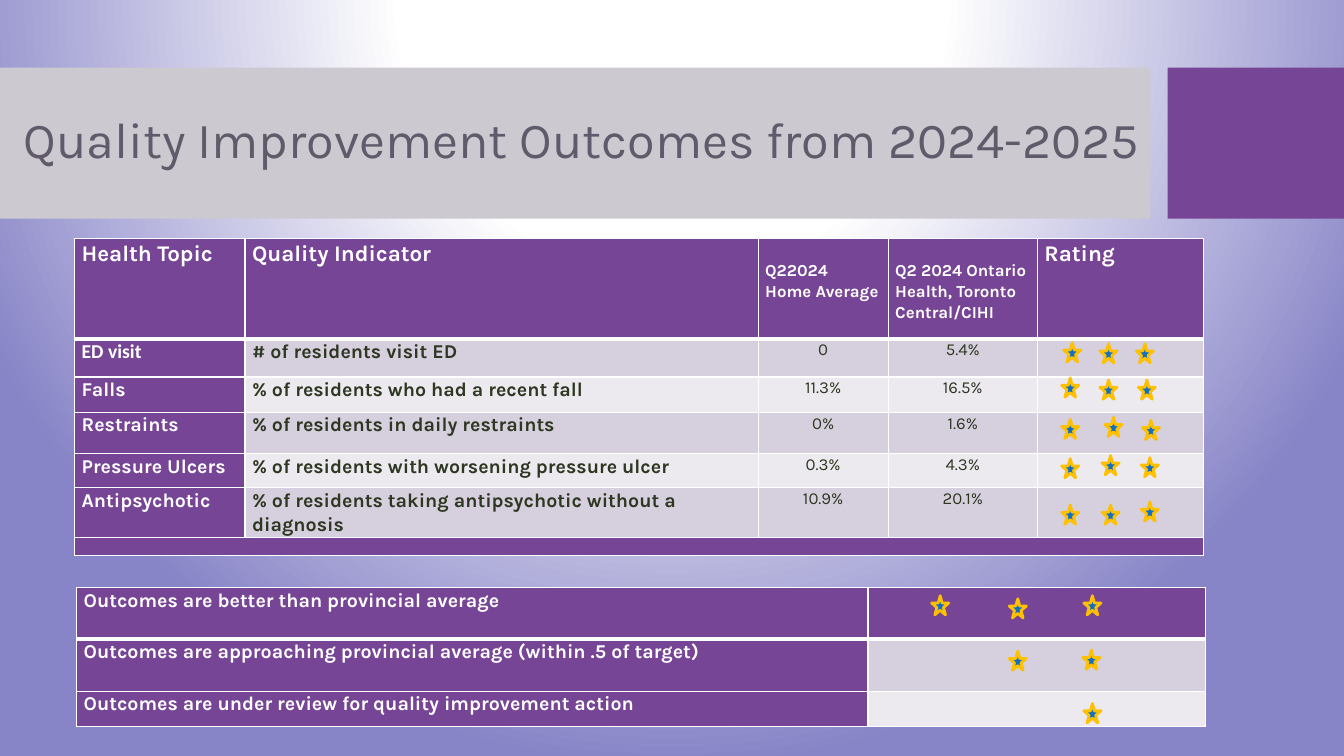
from dataclasses import dataclass
from typing import Any

import lxml.etree
import pptx
import pptx.dml.color
import pptx.enum.shapes
import pptx.enum.text
import pptx.oxml
import pptx.oxml.ns
import pptx.util

Inches = pptx.util.Inches
Pt = pptx.util.Pt
ALIGN = pptx.enum.text.PP_ALIGN
SHAPE = pptx.enum.shapes.MSO_SHAPE
qn = pptx.oxml.ns.qn

PURPLE, GREY, WHITE = "774595", "CCC9D1", "FFFFFF"
BANDS = ("D6CFDD", "ECE9EF")
INK, TITLE_INK = "2E3722", "605A6A"
STAR_BLUE, STAR_GOLD = "0F6FC6", "FFC000"
STAR_WIDTH, STAR_HEIGHT = 0.17, 0.19


@dataclass(frozen=True)
class CellStyle:
    size: int
    color: str = WHITE
    bold: bool = True
    align: Any = ALIGN.LEFT
    font: str = "Karla"
    top: float = 0


@dataclass(frozen=True)
class Entry:
    text: str
    style: CellStyle
    fill: str


@dataclass(frozen=True)
class Grid:
    left: float
    top: float
    columns: tuple[float, ...]
    heights: tuple[float, ...]
    rows: list[list[Entry]]


@dataclass(frozen=True)
class StarRow:
    spots: tuple[tuple[float, float], ...]


HEADING = CellStyle(16)
PERIOD = CellStyle(12, top=0.21)
TOPIC = CellStyle(14)
TOPIC_CALIBRI = CellStyle(14, font="Calibri")
INDICATOR = CellStyle(14, INK)
VALUE = CellStyle(12, INK, False, ALIGN.CENTER)
BLANK = CellStyle(8)


def rgb(value: str) -> pptx.dml.color.RGBColor:
    return pptx.dml.color.RGBColor.from_string(value)


def apply(target: Any, values: dict[str, Any]) -> None:
    for name, value in values.items():
        setattr(target, name, value)


def paint_background(slide: Any) -> None:
    slide.background.fill.solid()
    properties = slide.element.find(".//" + qn("p:bgPr"))
    stops = "".join(
        f'<a:gs pos="{position * 1000}"><a:srgbClr val="{color}"/></a:gs>'
        for position, color in ((0, WHITE), (35, WHITE), (100, "8784C7")))
    gradient = pptx.oxml.parse_xml(
        f'<a:gradFill {pptx.oxml.ns.nsdecls("a")} rotWithShape="1">'
        f'<a:gsLst>{stops}</a:gsLst><a:path path="circle">'
        '<a:fillToRect l="50000" t="-80000" r="50000" b="180000"/>'
        '</a:path></a:gradFill>')
    properties.replace(properties[0], gradient)


def add_figure(slide: Any, kind: Any, box: tuple[float, ...], fill: str,
               line: str | None = None) -> None:
    figure = slide.shapes.add_shape(kind, *map(Inches, box))
    figure.shadow.inherit = False
    figure.fill.solid()
    figure.fill.fore_color.rgb = rgb(fill)
    if line:
        figure.line.color.rgb = rgb(line)
        figure.line.width = Pt(2)
    else:
        figure.line.fill.background()


def add_borders(cell: Any, bottom: int) -> None:
    properties = cell._tc.get_or_add_tcPr()
    for side, width in (("L", 1), ("R", 1), ("T", 1), ("B", bottom)):
        line = lxml.etree.SubElement(properties, qn(f"a:ln{side}"), w=str(Pt(width)))
        fill = lxml.etree.SubElement(line, qn("a:solidFill"))
        lxml.etree.SubElement(fill, qn("a:srgbClr"), val=WHITE)


def fill_cell(cell: Any, entry: Entry, bottom: int) -> None:
    style = entry.style
    add_borders(cell, bottom)
    cell.fill.solid()
    cell.fill.fore_color.rgb = rgb(entry.fill)
    apply(cell, {"margin_left": Inches(0.07), "margin_right": Inches(0.07),
                 "margin_top": Inches(style.top), "margin_bottom": 0})
    cell.text = entry.text
    for paragraph in cell.text_frame.paragraphs:
        apply(paragraph, {"alignment": style.align, "line_spacing": 1.07})
        for run in paragraph.runs:
            apply(run.font, {"size": Pt(style.size), "bold": style.bold,
                             "name": style.font})
            run.font.color.rgb = rgb(style.color)
        if not entry.text:
            lxml.etree.SubElement(paragraph._p, qn("a:endParaRPr"),
                                  sz=str(style.size * 100))


def add_grid(slide: Any, grid: Grid) -> Any:
    frame = slide.shapes.add_table(
        len(grid.heights), len(grid.columns), Inches(grid.left), Inches(grid.top),
        Inches(sum(grid.columns)), Inches(sum(grid.heights)))
    table = frame.table
    apply(table, {"first_row": False, "horz_banding": False})
    for column, width in zip(table.columns, grid.columns):
        column.width = Inches(width)
    for row, height in zip(table.rows, grid.heights):
        row.height = Inches(height)
    for r, entries in enumerate(grid.rows):
        for c, entry in enumerate(entries):
            fill_cell(table.cell(r, c), entry, 3 if r == 0 else 1)
    return table


# Table contents
HEADINGS = [("Health Topic", HEADING), ("Quality Indicator", HEADING),
            ("Q22024\nHome Average", PERIOD),
            ("Q2 2024 Ontario Health, Toronto Central/CIHI", PERIOD),
            ("Rating", HEADING)]
RESULTS = [
    ("ED visit", "# of residents visit ED", "0", "5.4%"),
    ("Falls", "% of residents who had a recent fall", "11.3%", "16.5%"),
    ("Restraints", "% of residents in daily restraints", "0%", "1.6%"),
    ("Pressure Ulcers", "% of residents with worsening pressure ulcer", "0.3%", "4.3%"),
    ("Antipsychotic", "% of residents taking antipsychotic without a diagnosis",
     "10.9%", "20.1%"),
]
LEGEND = [("Outcomes are better than provincial average", PURPLE),
          ("Outcomes are approaching provincial average (within .5 of target)", BANDS[0]),
          ("Outcomes are under review for quality improvement action", BANDS[1])]
STARS = [
    StarRow(((10.55, 3.4), (10.91, 3.41), (11.27, 3.41))),
    StarRow(((10.53, 3.75), (10.91, 3.77), (11.29, 3.77))),
    StarRow(((10.53, 4.16), (10.96, 4.14), (11.33, 4.17))),
    StarRow(((10.53, 4.55), (10.93, 4.52), (11.32, 4.54))),
    StarRow(((10.53, 5.01), (10.93, 5.01), (11.32, 4.98))),
    StarRow(((9.24, 5.91), (10.01, 5.94), (10.75, 5.91))),
    StarRow(((10.01, 6.46), (10.74, 6.45))),
    StarRow(((10.75, 6.98),)),
]


def result_row(index: int, result: tuple[str, ...]) -> list[Entry]:
    band = BANDS[index % 2]
    topic, *details = result
    topic_style = TOPIC_CALIBRI if index == 0 else TOPIC
    return [Entry(topic, topic_style, PURPLE),
            *(Entry(text, style, band)
              for text, style in zip([*details, ""], (INDICATOR, VALUE, VALUE, BLANK)))]


def main() -> None:
    deck = pptx.Presentation()
    apply(deck, {"slide_width": Inches(13.33), "slide_height": Inches(7.5)})
    slide = deck.slides.add_slide(deck.slide_layouts[5])
    paint_background(slide)

    # Title band
    add_figure(slide, SHAPE.RECTANGLE, (0, 0.67, 11.41, 1.5), GREY)
    add_figure(slide, SHAPE.RECTANGLE, (11.58, 0.67, 1.75, 1.5), PURPLE)
    title = slide.shapes.title
    slide.shapes._spTree.append(title._element)
    apply(title, {"left": Inches(0.13), "top": Inches(0.82),
                  "width": Inches(11.6), "height": Inches(1.18)})
    title.text = "Quality Improvement Outcomes from 2024-2025"
    apply(title.text_frame, {"vertical_anchor": pptx.enum.text.MSO_ANCHOR.MIDDLE,
                             "auto_size": pptx.enum.text.MSO_AUTO_SIZE.NONE})
    heading = title.text_frame.paragraphs[0]
    apply(heading, {"alignment": ALIGN.LEFT, "line_spacing": 0.9})
    apply(heading.runs[0].font, {"name": "Karla", "size": Pt(36)})
    heading.runs[0].font.color.rgb = rgb(TITLE_INK)

    # Results and legend tables
    header = [Entry(text, style, PURPLE) for text, style in HEADINGS]
    body = [result_row(index, result) for index, result in enumerate(RESULTS)]
    footer = [Entry("", BLANK, PURPLE)] * len(HEADINGS)
    outcomes = add_grid(slide, Grid(
        0.74, 2.37, (1.69, 5.09, 1.29, 1.48, 1.65),
        (0.99, 0.38, 0.35, 0.41, 0.34, 0.49, 0.18), [header, *body, footer]))
    outcomes.cell(6, 0).merge(outcomes.cell(6, 4))
    add_grid(slide, Grid(
        0.76, 5.83, (7.85, 3.35), (0.51, 0.52, 0.35),
        [[Entry(text, TOPIC, PURPLE), Entry("", BLANK, fill)] for text, fill in LEGEND]))

    # Rating stars
    for star_row in STARS:
        for left, top in star_row.spots:
            add_figure(slide, SHAPE.STAR_5_POINT, (left, top, STAR_WIDTH, STAR_HEIGHT),
                       STAR_BLUE, STAR_GOLD)

    deck.save("out.pptx")


if __name__ == "__main__":
    main()
